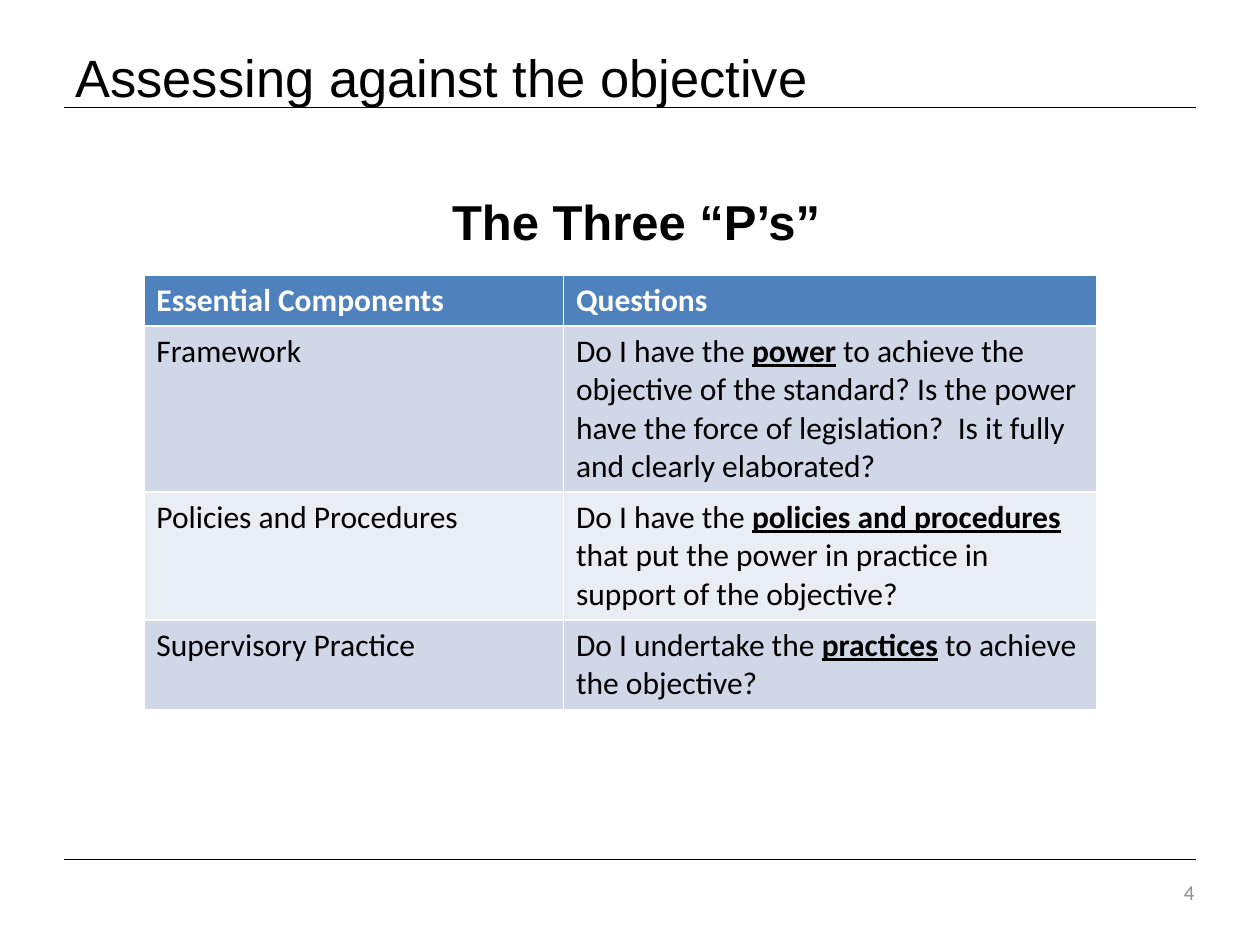
from lxml.etree import SubElement
from pptx import Presentation
from pptx.dml.color import RGBColor
from pptx.enum.shapes import MSO_CONNECTOR
from pptx.enum.text import MSO_ANCHOR, PP_ALIGN
from pptx.oxml.ns import qn
from pptx.util import Cm, Pt

BLACK = RGBColor(0x00, 0x00, 0x00)
WHITE = RGBColor(0xFF, 0xFF, 0xFF)
GREY = RGBColor(0x8C, 0x8C, 0x8C)
HEADER_BLUE = RGBColor(0x4F, 0x81, 0xBD)
BAND_DARK = RGBColor(0xD0, 0xD8, 0xE8)
BAND_LIGHT = RGBColor(0xE9, 0xED, 0xF4)

TITLE = {"name": "Arial", "size": Pt(30)}
HEADING = {"name": "Arial", "size": Pt(28), "bold": True}
PAGE_NUMBER = {"name": "Calibri", "size": Pt(12)}
BODY = {"name": "Calibri", "size": Pt(18), "bold": False}
HEADER = BODY | {"bold": True}
KEY_WORD = HEADER | {"underline": True}

COMPONENTS = [
    ("Framework", "Do I have the ", "power",
     " to achieve the objective of the standard? Is the power have the force of "
     "legislation?  Is it fully and clearly elaborated?"),
    ("Policies and Procedures", "Do I have the ", "policies and procedures ",
     "that put the power in practice in support of the objective?"),
    ("Supervisory Practice", "Do I undertake the ", "practices",
     " to achieve the objective?"),
]
COLUMN_WIDTHS = [8.46, 10.74]
ROW_HEIGHTS = [1.03, 3.35, 2.58, 1.8]


class SlideBuilder:
    def __init__(self, slide):
        self.slide = slide

    def styled_run(self, paragraph, text, style, color):
        run = paragraph.add_run()
        run.text = text
        for attribute, value in style.items():
            setattr(run.font, attribute, value)
        run.font.color.rgb = color

    def rule(self, left, right, y):
        line = self.slide.shapes.add_connector(
            MSO_CONNECTOR.STRAIGHT, Cm(left), Cm(y), Cm(right), Cm(y))
        line.line.color.rgb = BLACK
        line.line.width = Pt(0.75)
        SubElement(line.element.spPr, qn("a:effectLst"))

    def text(self, content, box, style, color=BLACK, align=PP_ALIGN.LEFT,
             anchor=MSO_ANCHOR.MIDDLE, before=0):
        frame = self.slide.shapes.add_textbox(*map(Cm, box)).text_frame
        frame.word_wrap = True
        frame.vertical_anchor = anchor
        paragraph = frame.paragraphs[0]
        paragraph.alignment = align
        paragraph.space_before = Pt(before)
        self.styled_run(paragraph, content, style, color)

    def cell(self, cell, fill, parts, color=BLACK):
        cell.fill.solid()
        cell.fill.fore_color.rgb = fill
        for content, style in parts:
            self.styled_run(cell.text_frame.paragraphs[0], content, style, color)

    def table(self, left, top, headers, components):
        table = self.slide.shapes.add_table(
            len(ROW_HEIGHTS), len(COLUMN_WIDTHS), Cm(left), Cm(top),
            Cm(sum(COLUMN_WIDTHS)), Cm(sum(ROW_HEIGHTS))).table
        for column, width in zip(table.columns, COLUMN_WIDTHS):
            column.width = Cm(width)
        for row, height in zip(table.rows, ROW_HEIGHTS):
            row.height = Cm(height)
        for column, header in enumerate(headers):
            self.cell(table.cell(0, column), HEADER_BLUE, [(header, HEADER)], WHITE)
        for row, (component, opening, key_word, ending) in enumerate(components, 1):
            band = BAND_DARK if row % 2 else BAND_LIGHT
            question = [(opening, BODY), (key_word, KEY_WORD), (ending, BODY)]
            self.cell(table.cell(row, 0), band, [(component, BODY)])
            self.cell(table.cell(row, 1), band, question)


def main():
    presentation = Presentation()
    presentation.slide_width = Cm(25.4)
    presentation.slide_height = Cm(19.05)
    builder = SlideBuilder(presentation.slides.add_slide(presentation.slide_layouts[6]))

    for y in (2.16, 17.32):
        builder.rule(1.3, 24.1, y)
    builder.text("Assessing against the objective", (1.27, 0.76, 22.86, 1.55), TITLE)
    builder.text("The Three “P’s” ", (2.9, 3.73, 20.12, 8.81), HEADING,
                 align=PP_ALIGN.CENTER, anchor=MSO_ANCHOR.TOP, before=3)
    builder.text("4", (22.86, 17.35, 1.47, 1.27), PAGE_NUMBER, GREY, PP_ALIGN.RIGHT)
    builder.table(2.9, 5.54, ["Essential Components", "Questions"], COMPONENTS)

    presentation.save("out.pptx")


if __name__ == "__main__":
    main()
